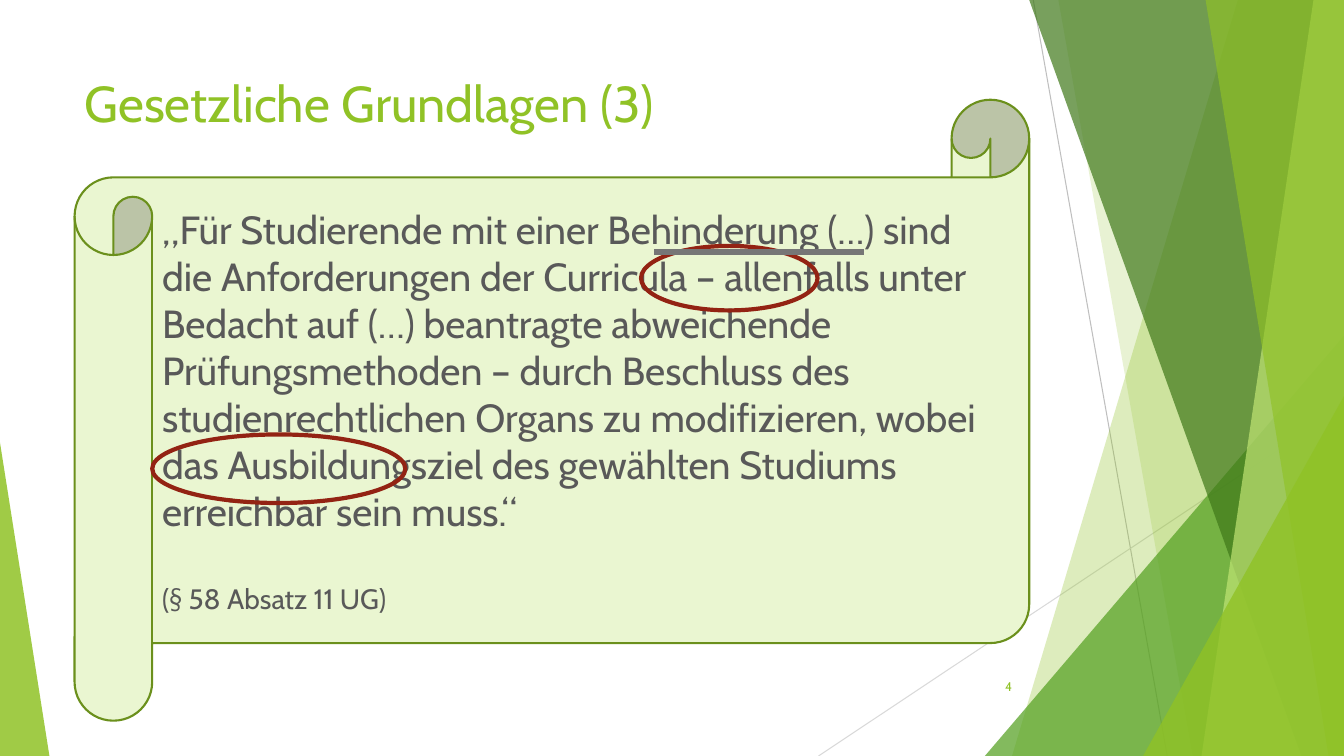
from dataclasses import dataclass
from lxml.etree import SubElement
from pptx import Presentation
from pptx.dml.color import RGBColor
from pptx.enum.shapes import MSO_CONNECTOR, MSO_SHAPE
from pptx.enum.text import MSO_ANCHOR, MSO_AUTO_SIZE, PP_ALIGN
from pptx.oxml.ns import qn
from pptx.util import Inches, Pt

WIDE, HIGH = Inches(13.33), Inches(7.5)


@dataclass(frozen=True)
class Theme:
    font: str = "Cabin"
    lime: str = "90C226"
    pale: str = "C0E474"
    green: str = "54A021"
    dark: str = "3F7819"
    paper: str = "EAF6D1"
    edge: str = "6B901C"
    ink: str = "595959"
    mark: str = "932313"
    rule: str = "767676"
    ray: str = "BFBFBF"
    faint: str = "D9D9D9"
    head: int = 36
    quote: int = 28
    cite: int = 20
    small: int = 9


THEME = Theme()

QUOTE = (
    "„Für Studierende mit einer Behinderung (…) sind die Anforderungen der "
    "Curricula – allenfalls unter Bedacht auf (…) beantragte abweichende "
    "Prüfungsmethoden – durch Beschluss des studienrechtlichen Organs zu "
    "modifizieren, wobei das Ausbildungsziel des gewählten Studiums "
    "erreichbar sein muss.“"
)

# Right-hand bands: top x, bottom x (percent of the width), colour, opacity
BACK = [(92.1, 75.3, THEME.lime, 30), (78.75, 88.73, THEME.lime, 20)]
FRONT = [
    (76.58, 96.83, THEME.dark, 70),
    (97.73, 89.4, THEME.pale, 70),
    (89.7, 98.85, THEME.lime, 65),
]


def across(share):
    return round(WIDE * share / 100)


def down(share):
    return round(HIGH * share / 100)


def area(left, top, width, height):
    """Turn percent shares of the slide into a box."""
    return across(left), down(top), across(width), down(height)


def tint(shape, color, alpha):
    shape.shadow.inherit = False
    shape.fill.solid()
    shape.fill.fore_color.rgb = RGBColor.from_string(color)
    shape.line.fill.background()
    tag = shape.fill._xPr.find(qn("a:solidFill"))[0]
    SubElement(tag, qn("a:alpha")).set("val", str(alpha * 1000))


def band(slide, top, base, color, alpha):
    """Draw a facet that reaches the right edge of the slide."""
    form = slide.shapes.build_freeform(across(top), 0)
    form.add_line_segments([(WIDE, 0), (WIDE, HIGH), (across(base), HIGH)])
    tint(form.convert_to_shape(), color, alpha)


def wedge(slide, left, top, width, peak, color, alpha):
    """Draw a triangle that stands on the bottom edge."""
    box = area(left, top, width, 100 - top)
    shape = slide.shapes.add_shape(MSO_SHAPE.ISOSCELES_TRIANGLE, *box)
    shape.adjustments[0] = peak
    tint(shape, color, alpha)


def stroke(shape, color, width):
    shape.line.color.rgb = RGBColor.from_string(color)
    shape.line.width = Pt(width)


def line(slide, start, end, color, width):
    (x1, y1), (x2, y2) = start, end
    rod = slide.shapes.add_connector(
        MSO_CONNECTOR.STRAIGHT, across(x1), down(y1), across(x2), down(y2))
    stroke(rod, color, width)
    SubElement(rod._element.spPr, qn("a:effectLst"))


def ring(slide, *box):
    shape = slide.shapes.add_shape(MSO_SHAPE.OVAL, *area(*box))
    shape.shadow.inherit = False
    shape.fill.background()
    stroke(shape, THEME.mark, 3)


def write(shape, items, color, anchor, align=PP_ALIGN.LEFT):
    """Fill a shape with (text, size, space before) paragraphs."""
    frame = shape.text_frame
    frame.word_wrap = True
    frame.auto_size = MSO_AUTO_SIZE.NONE
    frame.vertical_anchor = anchor
    frame.text = "\n".join(item[0] for item in items)
    for para, (_, size, gap) in zip(frame.paragraphs, items):
        para.alignment = align
        para.space_before = Pt(gap)
        font = para.runs[0].font
        font.name = THEME.font
        font.size = Pt(size)
        font.color.rgb = RGBColor.from_string(color)


def backdrop(slide):
    line(slide, (76.88, 0), (86.85, 100), THEME.ray, 0.75)
    line(slide, (100, 53.73), (60.9, 100), THEME.faint, 0.75)
    for item in BACK:
        band(slide, *item)
    wedge(slide, 73.28, 44.4, 26.72, 1, THEME.green, 72)
    for item in FRONT:
        band(slide, *item)
    wedge(slide, 85.05, 52.4, 14.95, 1, THEME.lime, 80)
    wedge(slide, 0, 58.53, 3.68, 0, THEME.lime, 85)


def title(slide, text):
    shape = slide.shapes.title
    shape.left, shape.top, shape.width, shape.height = area(
        5.55, 8.93, 70.5, 19.2)
    write(shape, [(text, THEME.head, 0)], THEME.lime, MSO_ANCHOR.TOP)


def scroll(slide):
    shape = slide.shapes.add_shape(
        MSO_SHAPE.HORIZONTAL_SCROLL, *area(5.55, 13.2, 71.03, 82.13))
    shape.shadow.inherit = False
    shape.fill.solid()
    shape.fill.fore_color.rgb = RGBColor.from_string(THEME.paper)
    stroke(shape, THEME.edge, 1.5)
    items = [(QUOTE, THEME.quote, 0), ("(§ 58 Absatz 11 UG)", THEME.cite, 34)]
    write(shape, items, THEME.ink, MSO_ANCHOR.MIDDLE)


def number(slide, text):
    shape = slide.shapes.add_textbox(*area(70.43, 88.13, 5.63, 5.33))
    write(shape, [(text, THEME.small, 0)], THEME.lime,
          MSO_ANCHOR.MIDDLE, PP_ALIGN.RIGHT)


def main():
    deck = Presentation()
    deck.slide_width, deck.slide_height = WIDE, HIGH
    slide = deck.slides.add_slide(deck.slide_layouts[5])
    backdrop(slide)
    title(slide, "Gesetzliche Grundlagen (3)")
    scroll(slide)
    ring(slide, 47.7, 32.53, 13.13, 8.53)
    ring(slide, 11.33, 57.47, 18.83, 9.07)
    line(slide, (48.68, 33.33), (64.28, 33.33), THEME.rule, 4.5)
    number(slide, "4")
    deck.save("out.pptx")


if __name__ == "__main__":
    main()
